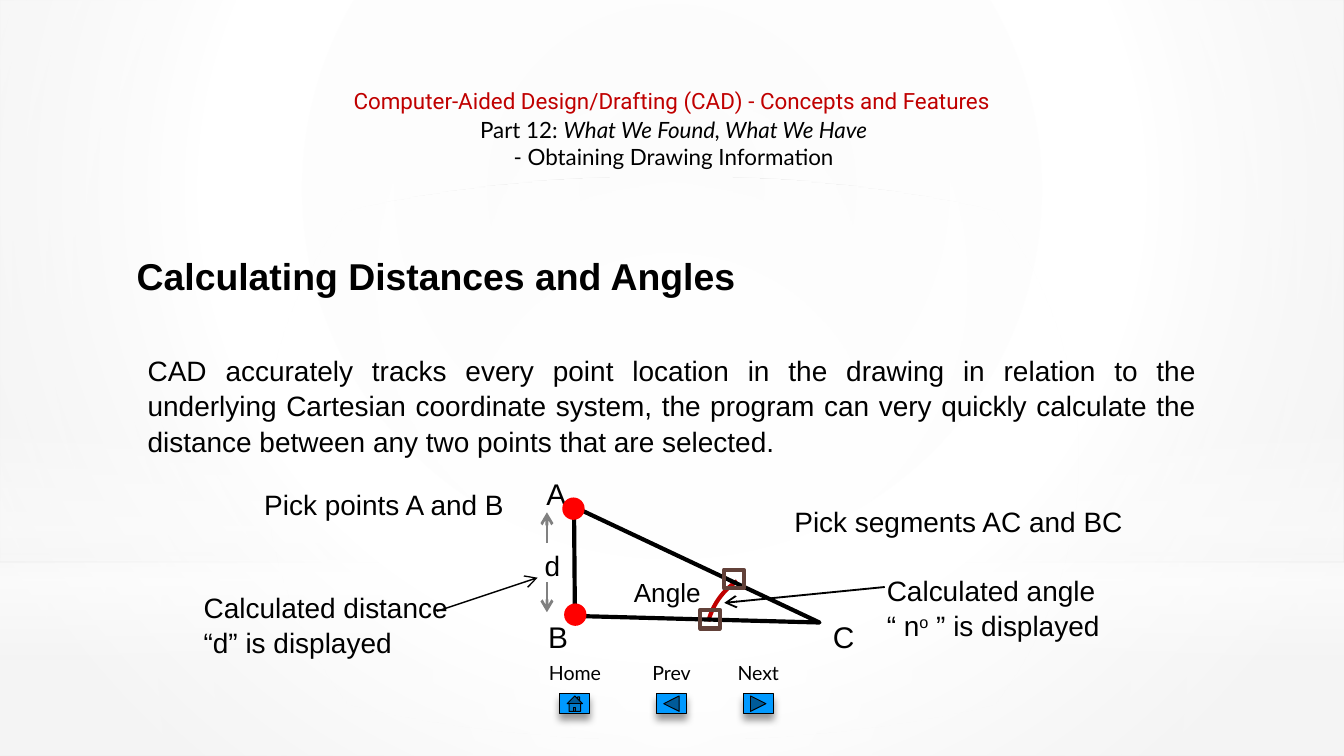
from pptx import Presentation
from pptx.dml.color import RGBColor
from pptx.enum.shapes import MSO_CONNECTOR, MSO_SHAPE
from pptx.enum.text import MSO_ANCHOR, PP_ALIGN
from pptx.oxml import parse_xml
from pptx.oxml.ns import nsdecls, qn
from pptx.util import Pt

WIDTH, HEIGHT = 720, 405
BLACK, WHITE, RED = "000000", "FFFFFF", "C00000"
CENTER, LEFT, JUSTIFY = PP_ALIGN.CENTER, PP_ALIGN.LEFT, PP_ALIGN.JUSTIFY


def rgb(value):
    return RGBColor.from_string(value)


def element(tag, body):
    return parse_xml(f"<a:{tag} {nsdecls('a')}>{body}</a:{tag}>")


def set_gradient(owner, fill, stops, focus=None):
    """Stops are (position, colour, opacity) in percent; focus makes it circular."""
    fill.gradient()
    old = next(owner.iter(qn("a:gradFill")))
    body = "".join(
        f'<a:gs pos="{pos * 1000}"><a:srgbClr val="{color}">'
        f'<a:alpha val="{alpha * 1000}"/></a:srgbClr></a:gs>'
        for pos, color, alpha in stops)
    direction = '<a:lin ang="5400000" scaled="0"/>'
    if focus:
        sides = " ".join(f'{k}="{v * 1000}"' for k, v in zip("ltrb", focus))
        direction = f'<a:path path="circle"><a:fillToRect {sides}/></a:path>'
    old.getparent().replace(old, element("gradFill", f"<a:gsLst>{body}</a:gsLst>{direction}"))


class Canvas:
    font, size, spacing = "Arial", 15, 1.06

    def __init__(self, s):
        self.s = s

    def fill_text(self, tf, lines, size, font, color, align, bold=False):
        """Each line is a list of (text, style) runs or one plain string."""
        for i, line in enumerate(lines):
            p = tf.paragraphs[0] if i == 0 else tf.add_paragraph()
            p.alignment = align
            p.font.size, p.font.name, p.font.bold = Pt(size), font, bold
            p.font.color.rgb = rgb(color)
            if font == self.font:
                p.line_spacing = self.spacing
            for text, style in [(line, None)] if isinstance(line, str) else line:
                r = p.add_run()
                r.text = text
                if style == "italic":
                    r.font.italic = True
                elif style == "super":
                    r.font._element.set("baseline", "30000")

    def title(self, x, y, w, h, text, size):
        sp = self.s.shapes.title
        sp.left, sp.top, sp.width, sp.height = map(Pt, (x, y, w, h))
        sp.text_frame.vertical_anchor = MSO_ANCHOR.TOP
        self.fill_text(sp.text_frame, [text], size, self.font, BLACK, LEFT, bold=True)
        self.s.shapes._spTree.append(sp._element)  # in front of the backdrop

    def text(self, x, y, w, h, *lines, size=size, font=font, color=BLACK, align=CENTER):
        tf = self.s.shapes.add_textbox(*map(Pt, (x, y, w, h))).text_frame
        tf.word_wrap = True
        self.fill_text(tf, lines, size, font, color, align)

    def letter(self, cx, cy, text, size=16):
        w, h = 20, 26
        tf = self.s.shapes.add_textbox(*map(Pt, (cx - w / 2, cy - h / 2, w, h))).text_frame
        tf.word_wrap = True
        tf.margin_left = tf.margin_right = 0
        self.fill_text(tf, [text], size, self.font, BLACK, CENTER)

    def shape(self, kind, x, y, w, h, fill=None, line=None, weight=2.25):
        sp = self.s.shapes.add_shape(kind, *map(Pt, (x, y, w, h)))
        self.paint(sp, fill, line, weight)
        return sp

    def paint(self, sp, fill, line, weight):
        sp.shadow.inherit = False
        if fill:
            sp.fill.solid()
            sp.fill.fore_color.rgb = rgb(fill)
        else:
            sp.fill.background()
        if line:
            sp.line.color.rgb = rgb(line)
            sp.line.width = Pt(weight)
        else:
            sp.line.fill.background()

    def glow(self, kind, x, y, w, h, stops, focus=None):
        sp = self.shape(kind, x, y, w, h)
        set_gradient(sp._element, sp.fill, [(pos, WHITE, a) for pos, a in stops], focus)

    def button(self, kind, cx, label):
        self.text(cx - 37, 350.5, 74, 20, label, size=10.5, font="Lato")
        sp = self.shape(kind, cx - 8, 371.5, 16, 11, "0099FF", BLACK, 0.5)
        shadow = element("outerShdw", '<a:srgbClr val="000000"><a:alpha val="40000"/></a:srgbClr>')
        for key, value in (("blurRad", Pt(4)), ("dist", Pt(3)), ("dir", 5400000)):
            shadow.set(key, str(int(value)))
        sp._element.spPr.find(qn("a:effectLst")).append(shadow)

    def polygon(self, points, line, weight=2.25):
        start, *rest = [(Pt(x), Pt(y)) for x, y in points]
        builder = self.s.shapes.build_freeform(*start)
        builder.add_line_segments(rest, close=True)
        self.paint(builder.convert_to_shape(), None, line, weight)

    def arrow(self, x1, y1, x2, y2, color=BLACK, weight=0.75):
        c = self.s.shapes.add_connector(MSO_CONNECTOR.STRAIGHT, *map(Pt, (x1, y1, x2, y2)))
        c.line.color.rgb = rgb(color)
        c.line.width = Pt(weight)
        tail = element("tailEnd", "")
        tail.set("type", "arrow")
        c._element.spPr.find(qn("a:ln")).append(tail)
        c._element.spPr.append(element("effectLst", ""))


def add_backdrop(canvas):
    s = canvas.s
    set_gradient(s._element, s.background.fill,
                 [(0, "F4F4F4", 100), (60, WHITE, 100), (100, "CCCCCC", 100)],
                 (20, 10, 20, 60))
    middle, rect = (50, 50, 50, 50), MSO_SHAPE.RECTANGLE
    horizon = 301.5
    canvas.glow(rect, 0, horizon, WIDTH, HEIGHT - horizon, [(0, 91), (37, 76), (100, 79)], middle)
    canvas.glow(rect, 0, 0, WIDTH, horizon, [(0, 89), (48, 62), (100, 79)], middle)
    canvas.glow(rect, 0, 222.5, WIDTH, 135,
                [(0, 0), (29, 30), (45, 40), (55, 26), (65, 60), (100, 0)])
    canvas.glow(MSO_SHAPE.OVAL, 0, 94.5, WIDTH, horizon, [(0, 100), (56, 0)], middle)


def add_header_and_navigation(canvas):
    canvas.text(150, 43, 420, 22,
                "Computer-Aided Design/Drafting (CAD) - Concepts and Features",
                size=12, font="Roboto", color=RED)
    canvas.text(137, 58.5, 448, 36,
                [("Part 12: ", None), ("What We Found, What We Have", "italic")],
                "- Obtaining Drawing Information", size=12, font="Lato")
    for kind, cx, label in ((MSO_SHAPE.ACTION_BUTTON_HOME, 308, "Home"),
                            (MSO_SHAPE.ACTION_BUTTON_BACK_OR_PREVIOUS, 359.75, "Prev"),
                            (MSO_SHAPE.ACTION_BUTTON_FORWARD_OR_NEXT, 406.25, "Next")):
        canvas.button(kind, cx, label)


def add_triangle(canvas):
    a, b, c = (307.5, 271.5), (308, 330), (439, 333.5)
    arc = canvas.shape(MSO_SHAPE.ARC, 378.5, 305.5, 72, 72, line=RED)
    arc.adjustments[0], arc.adjustments[1] = 190.09, 0
    arc.rotation = 237
    canvas.polygon([b, a, c], BLACK)
    for cx, cy, name in ((298, 263, "A"), (299, 339.5, "B"), (452, 340, "C")):
        canvas.letter(cx, cy, name)
    canvas.text(307, 304.5, 101, 24.5, "Angle", size=14)
    for cx, cy in ((307.2, 272.5), (308.2, 329.3)):
        canvas.shape(MSO_SHAPE.OVAL, cx - 6, cy - 6, 12, 12, "FF0000")
    for cx, cy in ((393.2, 310.2), (380.4, 331.7)):
        canvas.shape(MSO_SHAPE.RECTANGLE, cx - 5.3, cy - 5, 10.6, 10, line="624139")
    canvas.letter(296, 302, "d", 15)
    for start, end in ((312, 328), (291, 274.5)):
        canvas.arrow(293, start, 293, end, "808080", 1.5)


def add_notes(canvas):
    canvas.text(132, 256.5, 147.5, 25, "Pick points A and B")
    canvas.text(414.5, 265.5, 198, 25, "Pick segments AC and BC")
    canvas.text(102, 311.5, 150, 44, "Calculated distance “d” is displayed", align=LEFT)
    canvas.arrow(234, 327.5, 288, 309.5)
    canvas.text(468, 302.5, 174, 44, "Calculated angle",
                [("“ n", None), ("o", "super"), (" ” is displayed", None)], align=LEFT)
    canvas.arrow(474, 314.5, 388, 323, weight=1)


def main():
    prs = Presentation()
    prs.slide_width, prs.slide_height = Pt(WIDTH), Pt(HEIGHT)
    canvas = Canvas(prs.slides.add_slide(prs.slide_layouts[5]))
    add_backdrop(canvas)
    add_header_and_navigation(canvas)
    canvas.title(66, 130.5, 456, 31.5, "Calculating Distances and Angles", 20)
    canvas.text(72, 184.5, 576, 62,
                "CAD accurately tracks every point location in the drawing in relation to "
                "the underlying Cartesian coordinate system, the program can very quickly "
                "calculate the distance between any two points that are selected.",
                align=JUSTIFY)
    add_triangle(canvas)
    add_notes(canvas)
    prs.save("out.pptx")


if __name__ == "__main__":
    main()
